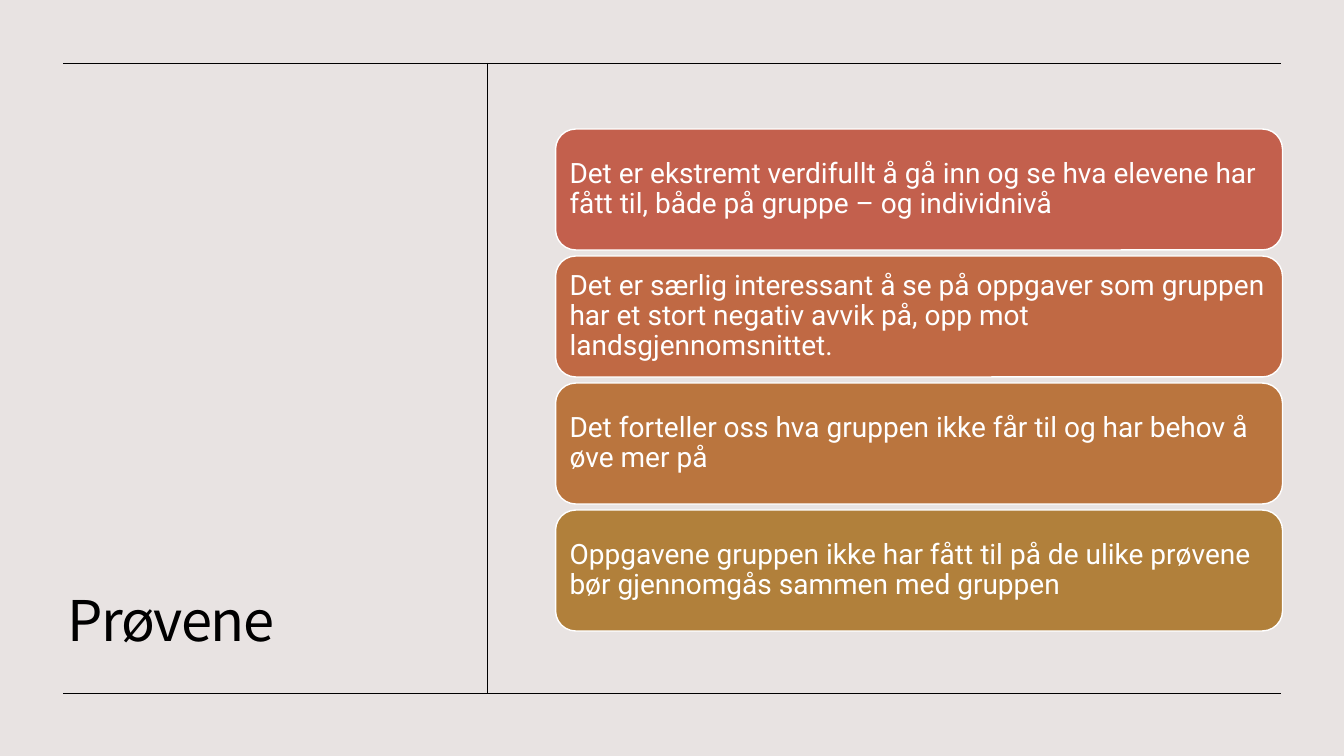
from lxml import etree
from pptx import Presentation
from pptx.dml.color import RGBColor
from pptx.enum.shapes import MSO_CONNECTOR, MSO_SHAPE
from pptx.enum.text import MSO_ANCHOR, MSO_AUTO_SIZE, PP_ALIGN
from pptx.oxml.ns import qn
from pptx.util import Inches, Pt

STRAIGHT = MSO_CONNECTOR.STRAIGHT
ROUND = MSO_SHAPE.ROUNDED_RECTANGLE
MIDDLE, BOTTOM = MSO_ANCHOR.MIDDLE, MSO_ANCHOR.BOTTOM
LEFT = PP_ALIGN.LEFT
FIXED = MSO_AUTO_SIZE.NONE

POINTS = [
    ("C3604D", "Det er ekstremt verdifullt å gå inn og se hva elevene har "
               "fått til, både på gruppe – og individnivå"),
    ("C06944", "Det er særlig interessant å se på oppgaver som gruppen har et "
               "stort negativ avvik på, opp mot landsgjennomsnittet."),
    ("BA753E", "Det forteller oss hva gruppen ikke får til og har behov å "
               "øve mer på"),
    ("B1803B", "Oppgavene gruppen ikke har fått til på de ulike prøvene bør "
               "gjennomgås sammen med gruppen"),
]


def tint(code):
    return RGBColor.from_string(code)


class Page:
    """Style and current slide, with lengths in percent of the slide's size."""

    ink, paper, back = "000000", "FFFFFF", "E8E3E2"
    head, body = "Noto Sans CJK KR", "Roboto"

    def __init__(self, deck):
        self.wide, self.high = deck.slide_width, deck.slide_height
        self.slide = deck.slides.add_slide(deck.slide_layouts[5])
        fill = self.slide.background.fill
        fill.solid()
        fill.fore_color.rgb = tint(self.back)

    def scale(self, x, y, *rest):
        sides = (self.wide, self.high) * 2
        return [round(side * part / 100) for side, part in zip(sides, (x, y, *rest))]

    def label(self, shape, text, face, size, color, anchor):
        frame = shape.text_frame
        frame.text = text
        frame.word_wrap = True
        frame.auto_size = FIXED
        frame.vertical_anchor = anchor
        para = frame.paragraphs[0]
        para.alignment = LEFT
        para.line_spacing = 0.9
        para.font.name = face
        para.font.size = Pt(size)
        para.font.color.rgb = tint(color)
        return frame

    def title(self, text, *box):
        shape = self.slide.shapes.title
        shape.left, shape.top, shape.width, shape.height = self.scale(*box)
        frame = self.label(shape, text, self.head, 40, self.ink, BOTTOM)
        frame.paragraphs[0].runs[0].font._element.set("spc", "-100")

    def rule(self, *ends):
        line = self.slide.shapes.add_connector(STRAIGHT, *self.scale(*ends))
        line.line.color.rgb = tint(self.ink)
        line.line.width = Pt(0.5)
        etree.SubElement(line._element.spPr, qn("a:effectLst"))

    def card(self, text, color, *box):
        shape = self.slide.shapes.add_shape(ROUND, *self.scale(*box))
        shape.shadow.inherit = False
        shape.fill.solid()
        shape.fill.fore_color.rgb = tint(color)
        shape.line.color.rgb = tint(self.paper)
        shape.line.width = Pt(1)
        frame = self.label(shape, text, self.body, 20, self.paper, MIDDLE)
        frame.margin_left = frame.margin_right = Inches(0.08)
        frame.margin_top = frame.margin_bottom = Inches(0.08)


def main():
    deck = Presentation()
    deck.slide_width, deck.slide_height = Inches(13.33), Inches(7.5)
    page = Page(deck)
    left, right, top, base, split = 4.7, 95.35, 8.33, 91.73, 36.25
    page.title("Prøvene", 4.28, 13.2, 28.73, 73.87)
    page.rule(left, base, right, base)
    page.rule(split, top, split, base)
    page.rule(left, top, right, top)
    for row, (color, text) in enumerate(POINTS):
        page.card(text, color, 41.34, 17.07 + 16.8 * row, 54.09, 16)
    deck.save("out.pptx")


if __name__ == "__main__":
    main()
